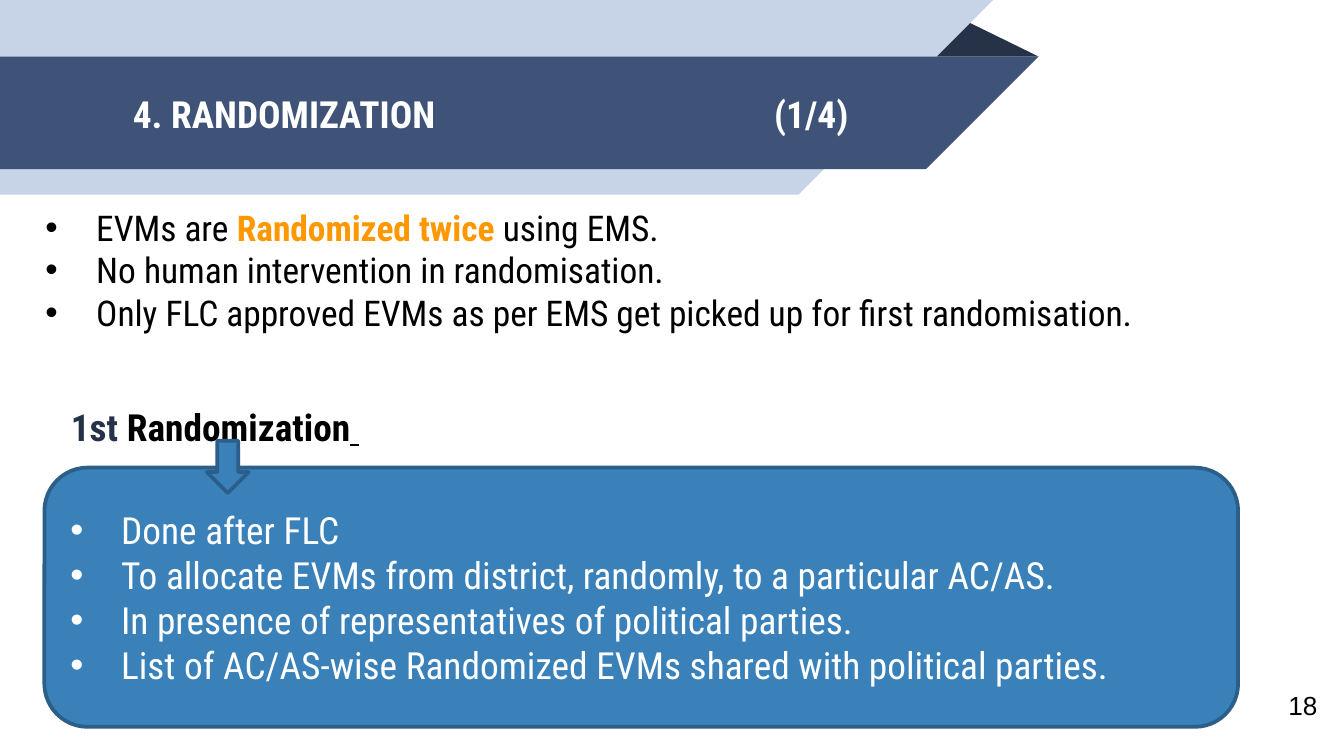
"""Build the slide on the randomization of voting machines."""
from lxml import etree
from pptx import Presentation
from pptx.dml.color import RGBColor
from pptx.enum.shapes import MSO_SHAPE
from pptx.enum.text import MSO_ANCHOR, PP_ALIGN
from pptx.oxml.ns import qn
from pptx.util import Cm, Pt

ROUNDED = MSO_SHAPE.ROUNDED_RECTANGLE
DOWN_ARROW = MSO_SHAPE.DOWN_ARROW
MIDDLE, TOP = MSO_ANCHOR.MIDDLE, MSO_ANCHOR.TOP
LEFT, JUSTIFY = PP_ALIGN.LEFT, PP_ALIGN.JUSTIFY
COLOURS = {
    "navy": "263248", "band": "3F5378", "pale": "C7D3E6", "blue": "3A81BA",
    "edge": "2B5F8A", "orange": "FF9800", "white": "FFFFFF", "black": "000000",
}


class SlideBuilder:
    def __init__(self, page, font_name):
        self.page = page
        self.font_name = font_name

    def colour(self, name):
        return RGBColor.from_string(COLOURS[name])

    def apply(self, target, values):
        for name, value in values.items():
            setattr(target, name, value)

    def paint(self, shape, fill, line=None):
        shape.shadow.inherit = False
        shape.fill.solid()
        shape.fill.fore_color.rgb = self.colour(fill)
        if line:
            shape.line.color.rgb = self.colour(line)
            shape.line.width = Pt(2)
        else:
            shape.line.fill.background()

    def polygon(self, points, fill):
        corners = [(Cm(x), Cm(y)) for x, y in points]
        builder = self.page.shapes.build_freeform(*corners[0])
        builder.add_line_segments(corners[1:], close=True)
        self.paint(builder.convert_to_shape(), fill)

    def ribbon(self, top, height, width, fill):
        bottom = top + height
        self.polygon([(0, top), (width, top), (width - height, bottom), (0, bottom)], fill)

    def shape(self, kind, frame, fill, line):
        shape = self.page.shapes.add_shape(kind, *map(Cm, frame))
        self.paint(shape, fill, line)
        return shape

    def text_box(self, frame, anchor=MIDDLE, inset=0.25):
        box = self.page.shapes.add_textbox(*map(Cm, frame))
        margins = ("margin_left", "margin_top", "margin_right", "margin_bottom")
        self.apply(box.text_frame, dict.fromkeys(margins, Cm(inset)))
        box.text_frame.vertical_anchor = anchor
        return box

    def add_text(self, box, paragraphs, size, align=LEFT, bullet=False, tab=None, font_name=None):
        frame = box.text_frame
        frame.word_wrap = True
        for index, spans in enumerate(paragraphs):
            para = frame.add_paragraph() if index else frame.paragraphs[0]
            para.alignment = align
            properties = para._p.get_or_add_pPr()
            if bullet:
                properties.set("marL", str(Cm(0.96)))
                properties.set("indent", str(-Cm(0.96)))
                font = etree.SubElement(properties, qn("a:buFont"))
                font.set("typeface", "Arial")
                etree.SubElement(properties, qn("a:buChar")).set("char", "•")
            if tab:
                stops = etree.SubElement(properties, qn("a:tabLst"))
                stop = etree.SubElement(stops, qn("a:tab"))
                stop.set("pos", str(Cm(tab)))
                stop.set("algn", "l")
            for text, colour, values in spans:
                span = para.add_run()
                span.text = text
                span.font.color.rgb = self.colour(colour)
                base = {"name": font_name or self.font_name, "size": Pt(size)}
                self.apply(span.font, base | values)


def main():
    deck = Presentation()
    deck.slide_width, deck.slide_height = Cm(25.4), Cm(14.29)
    slide = SlideBuilder(deck.slides.add_slide(deck.slide_layouts[6]), "Roboto Condensed")
    bold = {"bold": True}

    slide.polygon([(18.18, 0.36), (19.63, 1.07), (17.48, 1.07)], "navy")
    slide.ribbon(0, 3.68, 18.77, "pale")
    slide.ribbon(1.07, 2.13, 19.63, "band")

    title = slide.text_box((2.26, 1.09, 14.6, 2.13))
    slide.add_text(title, [[("4. RANDOMIZATION\t(1/4)", "white", bold)]], 20, tab=12.12)

    number = slide.text_box((24.1, 12.88, 1.3, 0.89))
    slide.add_text(number, [[("18", "black", {})]], 14, font_name="Arial")

    heading = slide.text_box((1.09, 7.4, 7.21, 1.32))
    slide.add_text(heading, [[
        ("1st", "navy", bold),
        (" Randomization", "black", bold),
        (" ", "black", {"underline": True}),
    ]], 20, JUSTIFY)

    facts = slide.text_box((0.61, 3.76, 23.22, 3.5), TOP, 0.13)
    facts.text_frame.margin_left = Cm(0.25)
    slide.add_text(facts, [
        [("EVMs are ", "black", {}), ("Randomized twice ", "orange", bold),
         ("using EMS.", "black", {})],
        [("No human intervention in randomisation.", "black", {})],
        [("Only FLC approved EVMs as per EMS get picked up for first randomisation.",
          "black", {})],
    ], 19, JUSTIFY, bullet=True)

    panel = slide.shape(ROUNDED, (0.84, 8.84, 22.56, 4.9), "blue", "edge")
    panel.text_frame.vertical_anchor = MIDDLE
    steps = (
        "Done after FLC",
        "To allocate EVMs from district, randomly, to a particular AC/AS.",
        "In presence of representatives of political parties.",
        "List of AC/AS-wise Randomized EVMs shared with political parties.",
    )
    slide.add_text(panel, [[(step, "white", {})] for step in steps], 20, bullet=True)

    slide.shape(DOWN_ARROW, (3.91, 8.33, 0.79, 0.99), "blue", "edge")
    deck.save("out.pptx")


if __name__ == "__main__":
    main()
